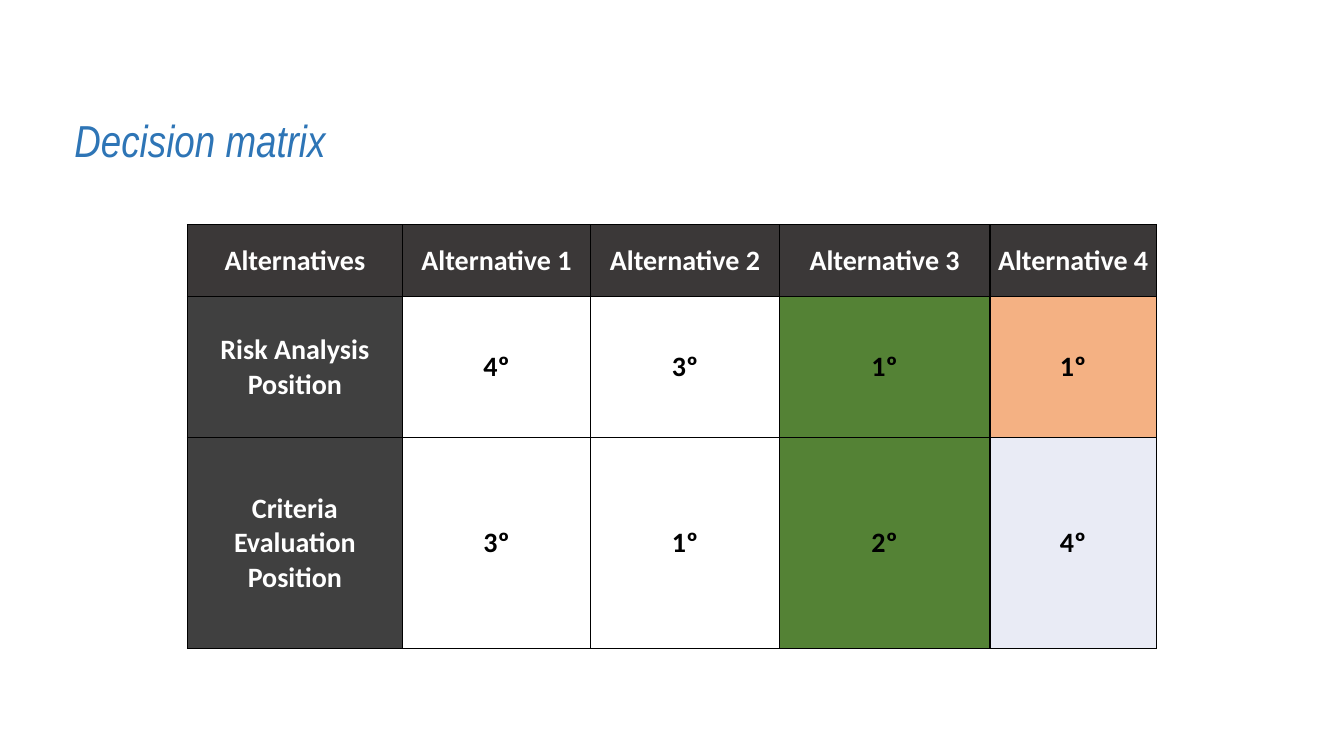
from lxml import etree
from pptx import Presentation
from pptx.dml.color import RGBColor
from pptx.enum.text import MSO_ANCHOR, PP_ALIGN
from pptx.oxml.ns import qn
from pptx.util import Pt

LEFT, MID = PP_ALIGN.LEFT, PP_ALIGN.CENTER
CENTER = MSO_ANCHOR.MIDDLE
PX = 9144
HEX = {
    "blue": "2E75B6", "head": "3B3838", "side": "404040",
    "white": "FFFFFF", "black": "000000", "green": "548235",
    "peach": "F4B183", "pale": "E9EBF5",
}


def write(frame, text, size=20, face="Calibri", color="black",
          bold=False, italic=False, align=MID):
    para = frame.paragraphs[0]
    para.alignment = align
    run = para.add_run()
    run.text = text
    font = run.font
    font.size, font.name = Pt(size), face
    font.bold, font.italic = bold, italic
    font.color.rgb = RGBColor.from_string(HEX[color])


def border(cell, color, width):
    props = cell._tc.get_or_add_tcPr()
    for spot, side in enumerate(("lnL", "lnR", "lnT", "lnB")):
        line = etree.Element(qn("a:" + side), w=str(Pt(width)))
        fill = etree.SubElement(line, qn("a:solidFill"))
        etree.SubElement(fill, qn("a:srgbClr"), val=HEX[color])
        props.insert(spot, line)


deck = Presentation()
deck.slide_width, deck.slide_height = 1333 * PX, 750 * PX
slide = deck.slides.add_slide(deck.slide_layouts[6])

title = slide.shapes.add_textbox(64 * PX, 107 * PX, 1204 * PX, 64 * PX)
title.text_frame.word_wrap = True
write(title.text_frame, "Decision matrix", size=32, face="Arial Narrow",
      color="blue", italic=True, align=LEFT)

rows = [
    ["Alternatives", "Alternative 1", "Alternative 2", "Alternative 3", "Alternative 4"],
    ["Risk Analysis Position", "4º", "3º", "1º", "1º"],
    ["Criteria Evaluation Position", "3º", "1º", "2º", "4º"],
]
fills = [
    ["head"] * 5,
    ["side", "white", "white", "green", "peach"],
    ["side", "white", "white", "green", "pale"],
]
wide = [213, 187, 187, 209, 165]
high = [71, 140, 209]

grid = slide.shapes.add_table(len(high), len(wide), 186 * PX, 223 * PX,
                              sum(wide) * PX, sum(high) * PX).table
for col, size in zip(grid.columns, wide):
    col.width = size * PX
for row, size in zip(grid.rows, high):
    row.height = size * PX

for r, (texts, tints) in enumerate(zip(rows, fills)):
    for c, (text, tint) in enumerate(zip(texts, tints)):
        cell = grid.cell(r, c)
        cell.margin_left = cell.margin_right = 7 * PX
        cell.margin_top, cell.margin_bottom = 1 * PX, 0
        cell.vertical_anchor = CENTER
        cell.fill.solid()
        cell.fill.fore_color.rgb = RGBColor.from_string(HEX[tint])
        border(cell, "black", 1)
        label = r == 0 or c == 0
        write(cell.text_frame, text, bold=True,
              color="white" if label else "black")

deck.save("out.pptx")
